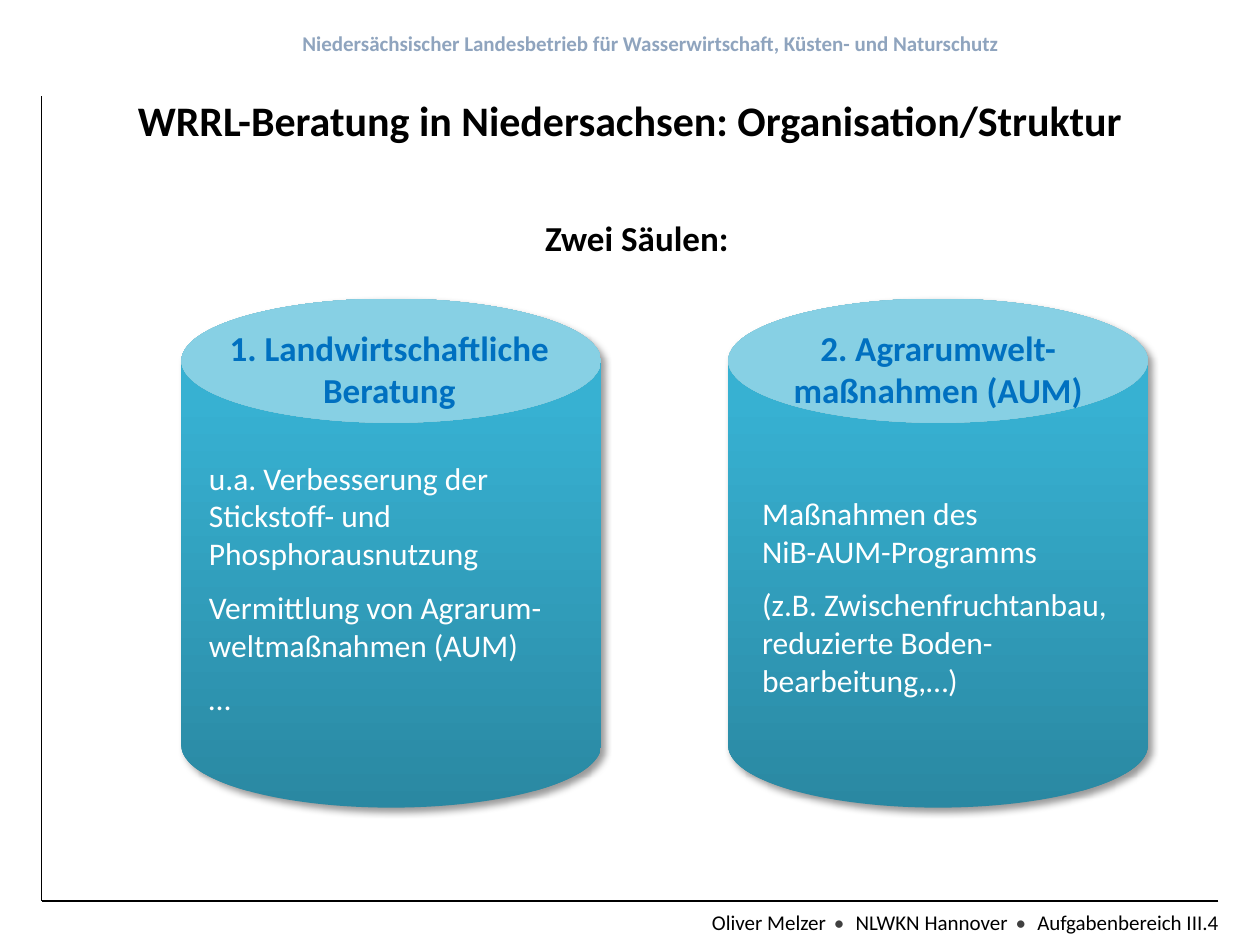
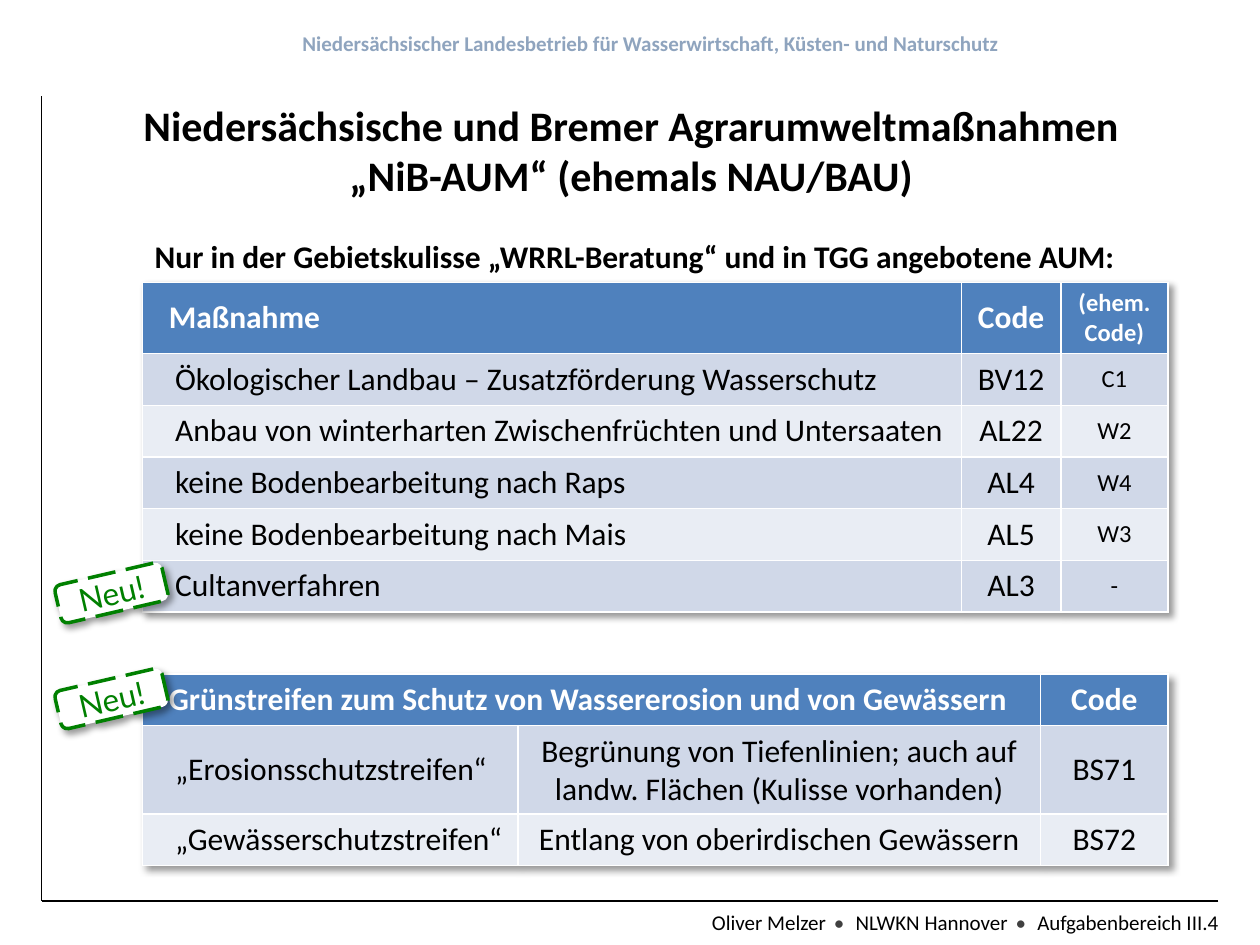
import pptx
import pptx.dml.color
import pptx.enum.dml
import pptx.enum.shapes
import pptx.enum.text
import pptx.oxml
import pptx.oxml.ns
import pptx.util

Inches = pptx.util.Inches
Pt = pptx.util.Pt
ALIGN = pptx.enum.text.PP_ALIGN
SHAPE = pptx.enum.shapes.MSO_SHAPE
MIDDLE = pptx.enum.text.MSO_ANCHOR.MIDDLE

BLACK, WHITE = "000000", "FFFFFF"
AGENCY_BLUE, DOT_GREY = "1F497D", "404040"
LID_BLUE, PILLAR_DARK, PILLAR_LIGHT = "0070C0", "2A88A2", "37B1D2"
HEADER_BLUE, BANDS = "4F81BD", ("D0D8E8", "E9EDF4")
NEW_GREEN = "008000"
FONT = "Calibri"
SHADOW = (
    '<a:outerShdw %s blurRad="50800" dist="38100" dir="2700000" algn="tl" rotWithShape="0">'
    '<a:srgbClr val="000000"><a:alpha val="40000"/></a:srgbClr></a:outerShdw>'
    % pptx.oxml.ns.nsdecls("a")
)


def rgb(hex_color):
    return pptx.dml.color.RGBColor.from_string(hex_color)


def fill_solid(target, color):
    target.fill.solid()
    target.fill.fore_color.rgb = rgb(color)


def style(font, size, color, bold=False, name=FONT):
    font.name, font.size, font.bold = name, Pt(size), bold
    font.color.rgb = rgb(color)


def effect_list():
    return pptx.oxml.parse_xml("<a:effectLst %s/>" % pptx.oxml.ns.nsdecls("a"))


def cast_shadow(effects):
    effects.append(pptx.oxml.parse_xml(SHADOW))


def add_text(slide, box, paragraphs, size, color, bold=False, align=ALIGN.CENTER):
    frame = slide.shapes.add_textbox(*map(Inches, box)).text_frame
    frame.word_wrap = True
    for index, words in enumerate(paragraphs):
        paragraph = frame.add_paragraph() if index else frame.paragraphs[0]
        paragraph.text = words
        paragraph.alignment = align
        if index:
            paragraph.space_before = Pt(size / 2)
        style(paragraph.font, size, color, bold)
    return frame


def add_shape(slide, kind, box):
    shape = slide.shapes.add_shape(kind, *map(Inches, box))
    shape.shadow.inherit = False
    shape.line.fill.background()
    return shape


def add_rule(slide, *ends):
    rule = slide.shapes.add_connector(
        pptx.enum.shapes.MSO_CONNECTOR.STRAIGHT, *map(Inches, ends))
    rule.line.color.rgb = rgb(BLACK)
    rule.line.width = Pt(0.75)
    rule._element.spPr.append(effect_list())


def add_footer(slide):
    footer = add_text(slide, (5.4, 7.17, 4.37, 0.3), [""], 12, BLACK, align=ALIGN.RIGHT)
    paragraph = footer.paragraphs[0]
    for index, part in enumerate(("Oliver Melzer", "NLWKN Hannover", "Aufgabenbereich III.4")):
        if index:
            dot = paragraph.add_run()
            dot.text = " • "
            dot.font.color.rgb = rgb(DOT_GREY)
            dot._r.get_or_add_rPr().set("spc", "180")
        paragraph.add_run().text = part


def add_base_slide(deck):
    slide = deck.slides.add_slide(deck.slide_layouts[6])
    agency = add_text(
        slide, (1.62, 0.13, 7.09, 0.43),
        ["Niedersächsischer Landesbetrieb für Wasserwirtschaft, Küsten- und Naturschutz"],
        12, AGENCY_BLUE, True)
    agency.vertical_anchor = MIDDLE
    veil = add_shape(slide, SHAPE.RECTANGLE, (0.28, 0.05, 9.69, 0.87))
    fill_solid(veil, WHITE)
    veil_color = veil._element.spPr.find(".//" + pptx.oxml.ns.qn("a:srgbClr"))
    veil_color.append(pptx.oxml.parse_xml(
        '<a:alpha %s val="50000"/>' % pptx.oxml.ns.nsdecls("a")))
    add_rule(slide, 9.67, 7.15, 0.33, 7.15)
    add_rule(slide, 0.33, 7.15, 0.33, 0.76)
    add_footer(slide)
    return slide


def add_title(slide, box, title):
    add_text(slide, box, [title], 24, BLACK, True)


def add_pillar(slide, left, lid_box, lid, body_box, body):
    pillar = add_shape(slide, SHAPE.CAN, (left, 2.37, 3.33, 4.04))
    pillar.adjustments[0] = 0.296
    pillar.fill.gradient()
    pillar.fill.gradient_angle = 90
    shades = ((0, PILLAR_DARK), (0.8, PILLAR_LIGHT))
    for stop, (position, shade) in zip(pillar.fill.gradient_stops, shades):
        stop.position = position
        stop.color.rgb = rgb(shade)
    cast_shadow(pillar._element.spPr.find(pptx.oxml.ns.qn("a:effectLst")))
    add_text(slide, lid_box, [lid], 20, LID_BLUE, True)
    add_text(slide, body_box, body, 18, WHITE, align=ALIGN.LEFT)


def fill_cell(cell, words, size, row, column):
    header = row == 0
    fill_solid(cell, HEADER_BLUE if header else BANDS[(row - 1) % 2])
    cell.vertical_anchor = MIDDLE
    if column == 0:
        cell.margin_left = Inches(0.21 if header else 0.26)
    paragraph = cell.text_frame.paragraphs[0]
    paragraph.text = words
    paragraph.alignment = ALIGN.CENTER if column else ALIGN.LEFT
    style(paragraph.font, size, WHITE if header else BLACK, header)


def add_measure_table(slide, top, widths, heights, sizes, rows):
    box = (1.13, top, sum(widths), sum(heights))
    table = slide.shapes.add_table(len(rows), len(widths), *map(Inches, box)).table
    for column, width in zip(table.columns, widths):
        column.width = Inches(width)
    for row, height in zip(table.rows, heights):
        row.height = Inches(height)
    for r, row in enumerate(rows):
        for c, words in enumerate(row):
            fill_cell(table.cell(r, c), words, sizes[c], r, c)
    effects = effect_list()
    cast_shadow(effects)
    table._tbl.tblPr.insert(0, effects)
    return table


def add_new_badge(slide, top):
    badge = add_shape(slide, SHAPE.ROUNDED_RECTANGLE, (0.45, top, 0.87, 0.31))
    badge.rotation = 347
    fill_solid(badge, WHITE)
    badge.line.color.rgb = rgb(NEW_GREEN)
    badge.line.width = Pt(2)
    badge.line.dash_style = pptx.enum.dml.MSO_LINE.LONG_DASH
    cast_shadow(badge._element.spPr.find(pptx.oxml.ns.qn("a:effectLst")))
    badge.text_frame.vertical_anchor = MIDDLE
    paragraph = badge.text_frame.paragraphs[0]
    paragraph.text = "Neu!"
    paragraph.alignment = ALIGN.CENTER
    style(paragraph.font, 18, NEW_GREEN, name="Lato")


def build_structure(deck):
    slide = add_base_slide(deck)
    add_title(slide, (0.94, 0.7, 8.12, 0.5),
              "WRRL-Beratung in Niedersachsen: Organisation/Struktur")
    add_text(slide, (0.39, 1.67, 9.33, 0.43), ["Zwei Säulen:"], 20, BLACK, True)
    add_pillar(
        slide, 1.44, (1.44, 2.54, 3.3, 0.77), "1. Landwirtschaftliche Beratung",
        (1.56, 3.59, 3.11, 2.22),
        ["u.a. Verbesserung der Stickstoff- und Phosphorausnutzung",
         "Vermittlung von Agrarum-weltmaßnahmen (AUM)", "…"])
    add_pillar(
        slide, 5.78, (5.89, 2.54, 3.11, 0.77), "2. Agrarumwelt-maßnahmen (AUM)",
        (5.95, 3.87, 3.05, 1.77),
        ["Maßnahmen des \nNiB-AUM-Programms",
         "(z.B. Zwischenfruchtanbau, reduzierte Boden-bearbeitung,…)"])


def build_measures(deck):
    slide = add_base_slide(deck)
    add_title(slide, (0.73, 0.74, 8.56, 0.91),
              "Niedersächsische und Bremer Agrarumweltmaßnahmen „NiB-AUM“ (ehemals NAU/BAU)")
    add_measure_table(
        slide, 2.24, (6.5, 0.79, 0.85), [0.56] + [0.41] * 5, (18, 18, 14),
        [("Maßnahme", "Code", "(ehem. Code)"),
         ("Ökologischer Landbau – Zusatzförderung Wasserschutz", "BV12", "C1"),
         ("Anbau von winterharten Zwischenfrüchten und Untersaaten", "AL22", "W2"),
         ("keine Bodenbearbeitung nach Raps", "AL4", "W4"),
         ("keine Bodenbearbeitung nach Mais", "AL5", "W3"),
         ("Cultanverfahren", "AL3", "-")])
    add_text(slide, (1.13, 1.83, 7.9, 0.4),
             ["Nur in der Gebietskulisse „WRRL-Beratung“ und in TGG angebotene AUM:"],
             18, BLACK, True, ALIGN.LEFT)
    strips = add_measure_table(
        slide, 5.35, (2.98, 4.15, 1.01), (0.41, 0.69, 0.41), (18, 18, 18),
        [("Grünstreifen zum Schutz von Wassererosion und von Gewässern", "", "Code"),
         ("„Erosionsschutzstreifen“",
          "Begrünung von Tiefenlinien; auch auf landw. Flächen (Kulisse vorhanden)", "BS71"),
         ("„Gewässerschutzstreifen“", "Entlang von oberirdischen Gewässern", "BS72")])
    strips.cell(0, 0).merge(strips.cell(0, 1))
    for top in (4.55, 5.39):
        add_new_badge(slide, top)


def main():
    deck = pptx.Presentation()
    deck.slide_width, deck.slide_height = Inches(10), Inches(7.5)
    build_structure(deck)
    build_measures(deck)
    deck.save("out.pptx")


if __name__ == "__main__":
    main()
